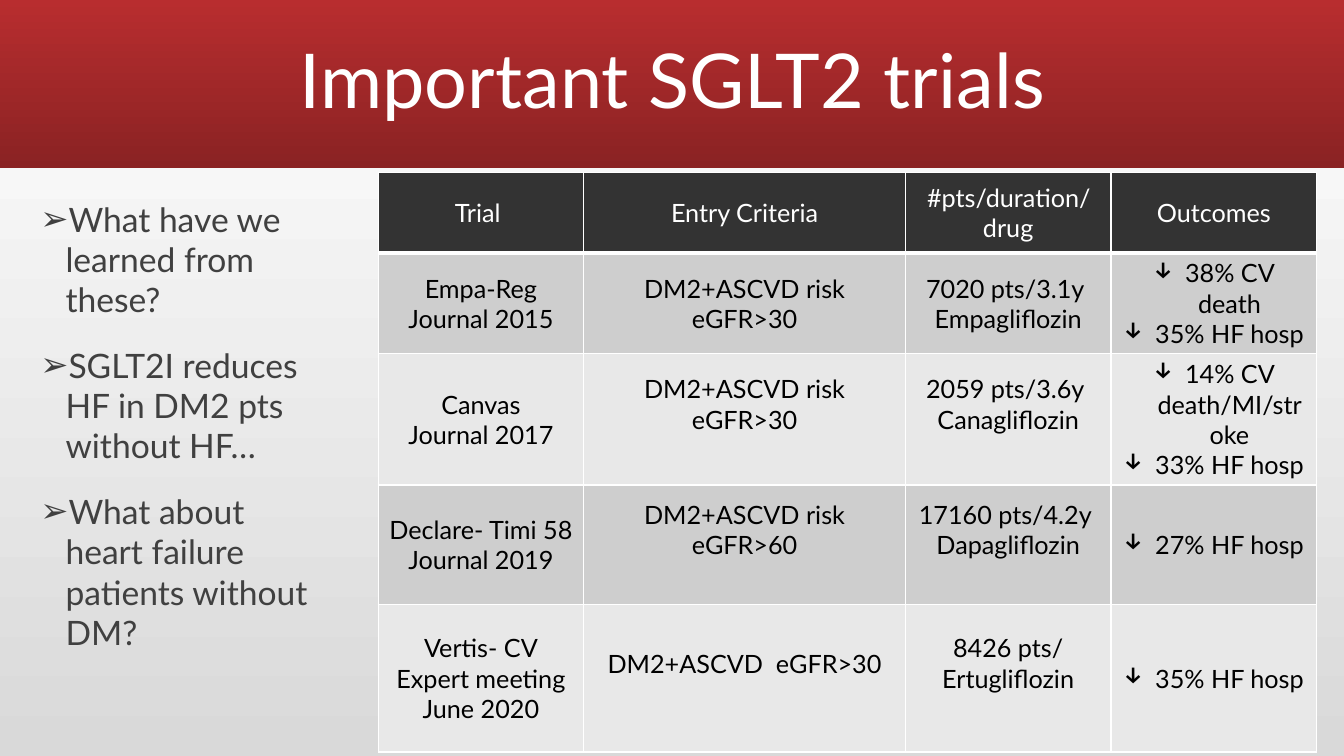
from lxml import etree
from pptx import Presentation
from pptx.dml.color import RGBColor
from pptx.enum.shapes import MSO_SHAPE
from pptx.enum.text import MSO_ANCHOR, MSO_AUTO_SIZE, PP_ALIGN
from pptx.oxml.ns import qn
from pptx.util import Inches, Pt

RECT = MSO_SHAPE.RECTANGLE
MIDDLE, TOP = MSO_ANCHOR.MIDDLE, MSO_ANCHOR.TOP
CENTER, LEFT = PP_ALIGN.CENTER, PP_ALIGN.LEFT
NO_FIT = MSO_AUTO_SIZE.NONE

FONT = "Lato"
COLORS = {
    "white": "FFFFFF", "black": "000000", "body": "404040",
    "head": "333333", "dark": "CECECE", "light": "E8E8E8",
    "red": "B82D2F", "wine": "8A2223", "gray": "D9D9D9",
}

TITLE = "Important SGLT2 trials"
POINTS = [
    "What have we learned from these?",
    "SGLT2I reduces HF in DM2 pts without HF…",
    "What about heart failure patients without DM?",
]
HEADS = ["Trial ", "Entry Criteria", "#pts/duration/drug", "Outcomes"]
TRIALS = [
    (["Empa-Reg", "Journal 2015"], ["DM2+ASCVD risk eGFR>30"],
     ["7020 pts/3.1y ", "Empagliflozin"], ["38% CV death", "35% HF hosp"]),
    (["Canvas", "Journal 2017"], ["DM2+ASCVD risk eGFR>30"],
     ["2059 pts/3.6y ", "Canagliflozin"],
     ["14% CV death/MI/stroke", "33% HF hosp"]),
    (["Declare- Timi 58", "Journal 2019"], ["DM2+ASCVD risk eGFR>60"],
     ["17160 pts/4.2y ", "Dapagliflozin"], ["27% HF hosp"]),
    (["Vertis- CV", "Expert meeting June 2020"], ["DM2+ASCVD  eGFR>30"],
     ["8426 pts/", "Ertugliflozin"], ["35% HF hosp"]),
]
COLS = [2.04, 3.19, 2.04, 2.04]
ROWS = [0.8, 0.91, 1.25, 1.19, 1.46]
OUTCOME = 3
RAISED = (1, 2)  # columns set half a line above the middle
RAISE = 0.35


def rgb(name):
    return RGBColor.from_string(COLORS[name])


def place(shape, left, top, width, height):
    shape.left, shape.top = Inches(left), Inches(top)
    shape.width, shape.height = Inches(width), Inches(height)


def shade(fill, first, last, angle):
    fill.gradient()
    fill.gradient_angle = angle
    for stop, name in zip(fill.gradient_stops, (first, last)):
        stop.color.rgb = rgb(name)


def write(frame, lines, size, color, align, gap=0, bullet=None, indent=0):
    for i, line in enumerate(lines):
        para = frame.paragraphs[0] if i == 0 else frame.add_paragraph()
        para.alignment = align
        para.space_before = Pt(gap)
        run = para.add_run()
        run.text = line
        run.font.size, run.font.name = Pt(size), FONT
        run.font.color.rgb = rgb(color)
        if bullet:
            props = para._p.get_or_add_pPr()
            props.set("marL", str(Inches(indent)))
            props.set("indent", str(-Inches(indent)))
            etree.SubElement(props, qn("a:buChar")).set("char", bullet)


def edge(cell, row):
    """Draw white cell borders, thick between header and first trial."""
    props = cell._tc.get_or_add_tcPr()
    for i, side in enumerate("LRTB"):
        thick = (row, side) in ((0, "B"), (1, "T"))
        line = etree.Element(qn("a:ln" + side), w=str(Pt(3 if thick else 1)))
        solid = etree.SubElement(line, qn("a:solidFill"))
        etree.SubElement(solid, qn("a:srgbClr")).set("val", COLORS["white"])
        props.insert(i, line)


def add_trials(slide):
    grid = slide.shapes.add_table(
        len(ROWS), len(COLS), Inches(3.75), Inches(1.71),
        Inches(sum(COLS)), Inches(sum(ROWS))).table
    for col, width in zip(grid.columns, COLS):
        col.width = Inches(width)
    for row, height in zip(grid.rows, ROWS):
        row.height = Inches(height)
    table = [[[head] for head in HEADS]] + TRIALS
    for r, row in enumerate(table):
        back = "head" if r == 0 else "dark" if r % 2 else "light"
        for c, lines in enumerate(row):
            cell = grid.cell(r, c)
            cell.vertical_anchor = MIDDLE
            cell.fill.solid()
            cell.fill.fore_color.rgb = rgb(back)
            if r > 1 and c in RAISED:
                cell.margin_bottom = Inches(RAISE)
            edge(cell, r)
            mark = "↓" if r and c == OUTCOME else None
            write(cell.text_frame, lines, 18, "black" if r else "white",
                  CENTER, bullet=mark, indent=0.31)


def main():
    deck = Presentation()
    deck.slide_width, deck.slide_height = Inches(13.33), Inches(7.5)
    slide = deck.slides.add_slide(deck.slide_layouts[1])
    shade(slide.background.fill, "gray", "white", 90)

    band = slide.shapes.add_shape(RECT, 0, 0, Inches(13.33), Inches(1.67))
    band.shadow.inherit = False
    band.line.fill.background()
    shade(band.fill, "red", "wine", 270)
    slide.shapes._spTree.insert(2, band._element)

    title = slide.shapes.title
    place(title, 1.17, 0.11, 11, 1.45)
    frame = title.text_frame
    frame.auto_size, frame.vertical_anchor = NO_FIT, MIDDLE
    write(frame, [TITLE], 54, "white", CENTER)
    frame.paragraphs[0].line_spacing = 0.9

    body = slide.placeholders[1]
    place(body, 0.3, 1.92, 3.04, 5.17)
    frame = body.text_frame
    frame.auto_size, frame.vertical_anchor = NO_FIT, TOP
    write(frame, POINTS, 24, "body", LEFT, gap=18, bullet="➢", indent=0.25)

    add_trials(slide)
    deck.save("out.pptx")


if __name__ == "__main__":
    main()
